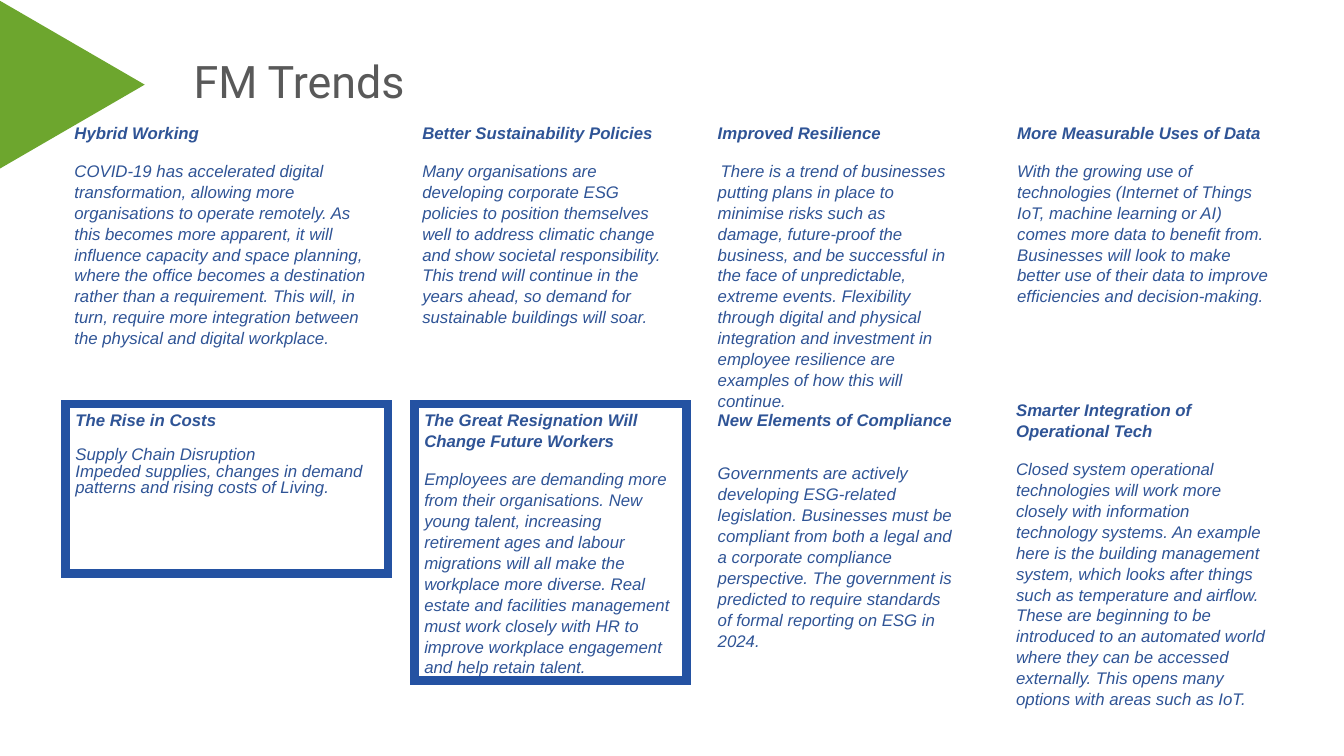
from dataclasses import dataclass

from lxml import etree
from pptx import Presentation
from pptx.dml.color import RGBColor
from pptx.enum.shapes import MSO_SHAPE
from pptx.enum.text import MSO_ANCHOR
from pptx.oxml.ns import qn
from pptx.util import Inches, Pt

RECTANGLE = MSO_SHAPE.RECTANGLE
TRIANGLE = MSO_SHAPE.ISOSCELES_TRIANGLE
TOP = MSO_ANCHOR.TOP
MIDDLE = MSO_ANCHOR.MIDDLE


@dataclass(frozen=True)
class Theme:
    green: RGBColor = RGBColor(0x6D, 0xA6, 0x2E)
    grey: RGBColor = RGBColor(0x59, 0x59, 0x59)
    text_blue: RGBColor = RGBColor(0x2F, 0x54, 0x96)
    frame_blue: RGBColor = RGBColor(0x24, 0x52, 0xA2)
    title_font: str = "Roboto"
    body_font: str = "Arial"
    title_size: Pt = Pt(32)
    body_size: Pt = Pt(12)
    frame_width: Pt = Pt(6)
    line_spacing: float = 1.04


@dataclass(frozen=True)
class Trend:
    """One heading with its paragraphs; gap is the space under the heading."""
    heading: str
    paragraphs: tuple
    box: tuple
    framed: bool = False
    gap: Pt = Pt(12)
    body_spacing: float = Theme.line_spacing
    indent: float = 0


UPPER_TOP, LOWER_TOP = 1.16, 4.01
UPPER_HEIGHT = 2.98

TRENDS = [
    Trend("Hybrid Working", (
        "COVID-19 has accelerated digital transformation, allowing more "
        "organisations to operate remotely. As this becomes more apparent, it "
        "will influence capacity and space planning, where the office becomes a "
        "destination rather than a requirement. This will, in turn, require more "
        "integration between the physical and digital workplace.",),
        (0.64, UPPER_TOP, 3.2, UPPER_HEIGHT)),
    Trend("Better Sustainability Policies", (
        "Many organisations are developing corporate ESG policies to position "
        "themselves well to address climatic change and show societal "
        "responsibility. This trend will continue in the years ahead, so demand "
        "for sustainable buildings will soar.",),
        (4.09, UPPER_TOP, 2.7, UPPER_HEIGHT)),
    Trend("Improved Resilience", (
        "There is a trend of businesses putting plans in place to minimise risks "
        "such as damage, future-proof the business, and be successful in the face "
        "of unpredictable, extreme events. Flexibility through digital and "
        "physical integration and investment in employee resilience are examples "
        "of how this will continue.",),
        (7.02, UPPER_TOP, 2.55, UPPER_HEIGHT), indent=0.03),
    Trend("More Measurable Uses of Data", (
        "With the growing use of technologies (Internet of Things IoT, machine "
        "learning or AI) comes more data to benefit from. Businesses will look to "
        "make better use of their data to improve efficiencies and "
        "decision-making.",),
        (9.99, UPPER_TOP, 2.7, UPPER_HEIGHT)),
    Trend("The Rise in Costs", (
        "Supply Chain Disruption",
        "Impeded supplies, changes in demand patterns and rising costs of Living."),
        (0.65, LOWER_TOP, 3.2, 1.68), framed=True, body_spacing=Pt(12)),
    Trend("The Great Resignation Will Change Future Workers", (
        "Employees are demanding more from their organisations. New young talent, "
        "increasing retirement ages and labour migrations will all make the "
        "workplace more diverse. Real estate and facilities management must work "
        "closely with HR to improve workplace engagement and help retain talent.",),
        (4.11, LOWER_TOP, 2.7, 2.74), framed=True),
    Trend("New Elements of Compliance", (
        "Governments are actively developing ESG-related legislation. Businesses "
        "must be compliant from both a legal and a corporate compliance "
        "perspective. The government is predicted to require standards of formal "
        "reporting on ESG in 2024.",),
        (7.02, LOWER_TOP, 2.55, 3.05), gap=Pt(23)),
    Trend("Smarter Integration of Operational Tech", (
        "Closed system operational technologies will work more closely with "
        "information technology systems. An example here is the building "
        "management system, which looks after things such as temperature and "
        "airflow. These are beginning to be introduced to an automated world where "
        "they can be accessed externally. This opens many options with areas such "
        "as IoT.",),
        (9.98, 3.91, 2.7, 3.1)),
]


class TrendSlide:
    def __init__(self, slide, theme):
        self.shapes = slide.shapes
        self.theme = theme

    def corner_triangle(self, left, top, width, height):
        corner = self.shapes.add_shape(
            TRIANGLE, Inches(left), Inches(top), Inches(width), Inches(height))
        corner.rotation = 90
        corner.shadow.inherit = False
        corner.fill.solid()
        corner.fill.fore_color.rgb = self.theme.green
        corner.line.fill.background()

    def text_area(self, left, top, width, height, anchor=TOP):
        area = self.shapes.add_textbox(
            Inches(left), Inches(top), Inches(width), Inches(height)).text_frame
        area.word_wrap = True
        area.vertical_anchor = anchor
        return area

    def title(self, text, box):
        area = self.text_area(*box, anchor=MIDDLE)
        area.margin_left = area.margin_right = 0
        area.margin_top = area.margin_bottom = 0
        area.text = text
        heading = area.paragraphs[0]
        heading.line_spacing = 0.9
        heading.font.name = self.theme.title_font
        heading.font.size = self.theme.title_size
        heading.font.color.rgb = self.theme.grey

    def frame(self, left, top, width, height):
        border = self.shapes.add_shape(
            RECTANGLE, Inches(left), Inches(top), Inches(width), Inches(height))
        border.shadow.inherit = False
        border.fill.background()
        border.line.color.rgb = self.theme.frame_blue
        border.line.width = self.theme.frame_width
        outline = border.line.fill._xPr
        etree.SubElement(outline, qn("a:miter"), lim="800000")

    def trend(self, trend):
        if trend.framed:
            self.frame(*trend.box)
        area = self.text_area(*trend.box)
        area.text = "\n".join((trend.heading, *trend.paragraphs))
        heading, *body = area.paragraphs
        for paragraph in area.paragraphs:
            paragraph.line_spacing = trend.body_spacing
            paragraph.font.name = self.theme.body_font
            paragraph.font.size = self.theme.body_size
            paragraph.font.color.rgb = self.theme.text_blue
            paragraph.font.italic = True
        heading.line_spacing = self.theme.line_spacing
        heading.font.bold = True
        body[0].space_before = trend.gap
        if trend.indent:
            properties = body[0]._p.get_or_add_pPr()
            properties.set("marL", "0")
            properties.set("indent", str(Inches(trend.indent)))


def main():
    presentation = Presentation()
    presentation.slide_width = Inches(13.33)
    presentation.slide_height = Inches(7.5)
    blank = presentation.slide_layouts[6]
    page = TrendSlide(presentation.slides.add_slide(blank), Theme())

    page.corner_triangle(-0.12, 0.12, 1.67, 1.44)
    page.title("FM Trends", (1.92, 0.59, 8.68, 0.48))
    for trend in TRENDS:
        page.trend(trend)
    presentation.save("out.pptx")


if __name__ == "__main__":
    main()
